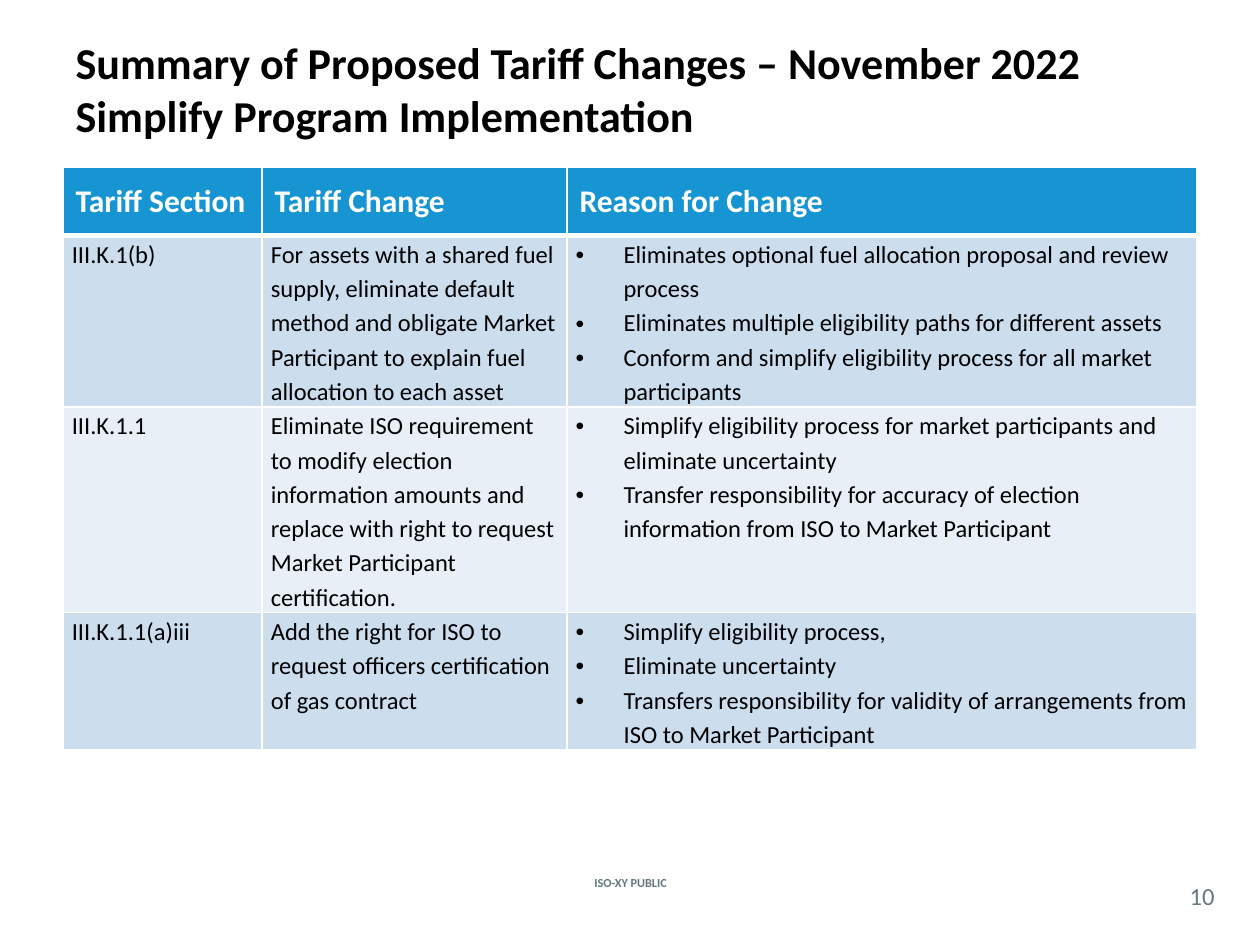
"""Build the tariff change summary slide."""
from dataclasses import dataclass

from lxml.etree import SubElement
from pptx import Presentation
from pptx.dml.color import RGBColor as RGB
from pptx.enum.text import MSO_ANCHOR as Anchor, MSO_AUTO_SIZE as AutoSize, PP_ALIGN as Align
from pptx.oxml.ns import qn
from pptx.util import Inches, Pt


@dataclass(frozen=True)
class Theme:
    """Fonts, colours and type sizes of the slide."""
    font: str = "Calibri"
    ink: str = "000000"
    white: str = "FFFFFF"
    muted: str = "62777F"
    header: str = "1795D2"
    bands: tuple[str, str] = ("CCDDEE", "E8EFF7")
    title_pt: float = 25.2
    header_pt: float = 18
    body_pt: float = 14
    label_pt: float = 7


@dataclass(frozen=True)
class Change:
    """One tariff change and the reasons for it."""
    section: str
    change: str
    reasons: tuple[str, ...]


@dataclass(frozen=True)
class Label:
    """A small line of text in the footer."""
    text: str
    box: tuple[float, float, float, float]
    size: float
    bold: bool


THEME = Theme()
TITLE = "Summary of Proposed Tariff Changes – November 2022\nSimplify Program Implementation"
HEADINGS = ("Tariff Section", "Tariff Change", "Reason for Change")
COL_WIDTHS = (1.58, 2.42, 5)
HEADER_HEIGHT, ROW_HEIGHT = 0.54, 0.94
CHANGES = (
    Change(
        "III.K.1(b)",
        "For assets with a shared fuel supply, eliminate default method and obligate "
        "Market Participant to explain fuel allocation to each asset",
        ("Eliminates optional fuel allocation proposal and review process",
         "Eliminates multiple eligibility paths for different assets",
         "Conform and simplify eligibility process for all market participants")),
    Change(
        "III.K.1.1",
        "Eliminate ISO requirement to modify election information amounts and replace "
        "with right to request Market Participant certification.",
        ("Simplify eligibility process for market participants and eliminate uncertainty",
         "Transfer responsibility for accuracy of election information from ISO to "
         "Market Participant")),
    Change(
        "III.K.1.1(a)iii",
        "Add the right for ISO to request officers certification of gas contract",
        ("Simplify eligibility process,",
         "Eliminate uncertainty",
         "Transfers responsibility for validity of arrangements from ISO to "
         "Market Participant")),
)
LABELS = (
    Label("ISO-XY PUBLIC", (4.27, 6.92, 1.47, 0.17), THEME.label_pt, True),
    Label("10", (9.33, 6.96, 0.42, 0.29), THEME.body_pt, False),
)


def add_bullet(p) -> None:
    """Give a paragraph a hanging bullet."""
    pPr = p._p.get_or_add_pPr()
    pPr.set("marL", str(Inches(0.38)))
    pPr.set("indent", str(-Inches(0.38)))
    SubElement(pPr, qn("a:buFont"), typeface="Arial")
    SubElement(pPr, qn("a:buChar"), char="•")


def write(tf, *texts: str, size: float, color: str = THEME.ink, bold: bool = False,
          align=Align.LEFT, spacing: float = 1.0, bullet: bool = False) -> None:
    """Write each text as one formatted paragraph."""
    for i, text in enumerate(texts):
        p = tf.add_paragraph() if i else tf.paragraphs[0]
        p.text = text
        if bullet:
            add_bullet(p)
        p.alignment, p.line_spacing = align, spacing
        for r in p.runs:
            r.font.name, r.font.size, r.font.bold = THEME.font, Pt(size), bold
            r.font.color.rgb = RGB.from_string(color)


def set_margins(target, x: float, y: float) -> None:
    """Set the inner margins of a cell or text frame."""
    target.margin_left = target.margin_right = Inches(x)
    target.margin_top = target.margin_bottom = Inches(y)


def style_cell(cell, fill: str, *, top: float = 1, bottom: float = 1) -> None:
    """Give a cell its white borders and its fill."""
    tcPr = cell._tc.get_or_add_tcPr()
    for side, width in (("L", 1), ("R", 1), ("T", top), ("B", bottom)):
        ln = SubElement(tcPr, qn(f"a:ln{side}"), w=str(Pt(width)))
        SubElement(SubElement(ln, qn("a:solidFill")), qn("a:srgbClr"), val=THEME.white)
    cell.fill.solid()
    cell.fill.fore_color.rgb = RGB.from_string(fill)


def add_title(s) -> None:
    """Place and fill the title."""
    sp = s.shapes.title
    sp.left, sp.top, sp.width, sp.height = map(Inches, (0.5, 0.08, 9, 1.25))
    tf = sp.text_frame
    tf.auto_size, tf.vertical_anchor = AutoSize.NONE, Anchor.MIDDLE
    write(tf, TITLE, size=THEME.title_pt, bold=True)


def add_changes(s) -> None:
    """Draw the table of tariff changes."""
    height = HEADER_HEIGHT + ROW_HEIGHT * len(CHANGES)
    table = s.shapes.add_table(len(CHANGES) + 1, len(HEADINGS),
                               *map(Inches, (0.5, 1.33, sum(COL_WIDTHS), height))).table
    for col, width in zip(table.columns, COL_WIDTHS):
        col.width = Inches(width)
    for i, row in enumerate(table.rows):
        row.height = Inches(ROW_HEIGHT if i else HEADER_HEIGHT)
    for cell, heading in zip(table.rows[0].cells, HEADINGS):
        style_cell(cell, THEME.header, bottom=3)
        set_margins(cell, 0.1, 0.05)
        cell.vertical_anchor = Anchor.MIDDLE
        write(cell.text_frame, heading, size=THEME.header_pt, color=THEME.white, bold=True)
    for i, item in enumerate(CHANGES):
        columns = ((item.section,), (item.change,), item.reasons)
        for j, texts in enumerate(columns):
            cell = table.cell(i + 1, j)
            style_cell(cell, THEME.bands[i % 2], top=1 if i else 3)
            set_margins(cell, 0.07, 0)
            write(cell.text_frame, *texts, size=THEME.body_pt, spacing=1.15,
                  bullet=texts is item.reasons)


def add_label(s, label: Label) -> None:
    """Add one footer label."""
    tf = s.shapes.add_textbox(*map(Inches, label.box)).text_frame
    tf.word_wrap, tf.vertical_anchor = True, Anchor.MIDDLE
    set_margins(tf, 0, 0)
    write(tf, label.text, size=label.size, color=THEME.muted, bold=label.bold,
          align=Align.CENTER)


def main() -> None:
    """Build and save the slide."""
    prs = Presentation()
    prs.slide_width, prs.slide_height = Inches(10), Inches(7.5)
    s = prs.slides.add_slide(prs.slide_layouts[5])
    add_title(s)
    add_changes(s)
    for label in LABELS:
        add_label(s, label)
    prs.save("out.pptx")


if __name__ == "__main__":
    main()
